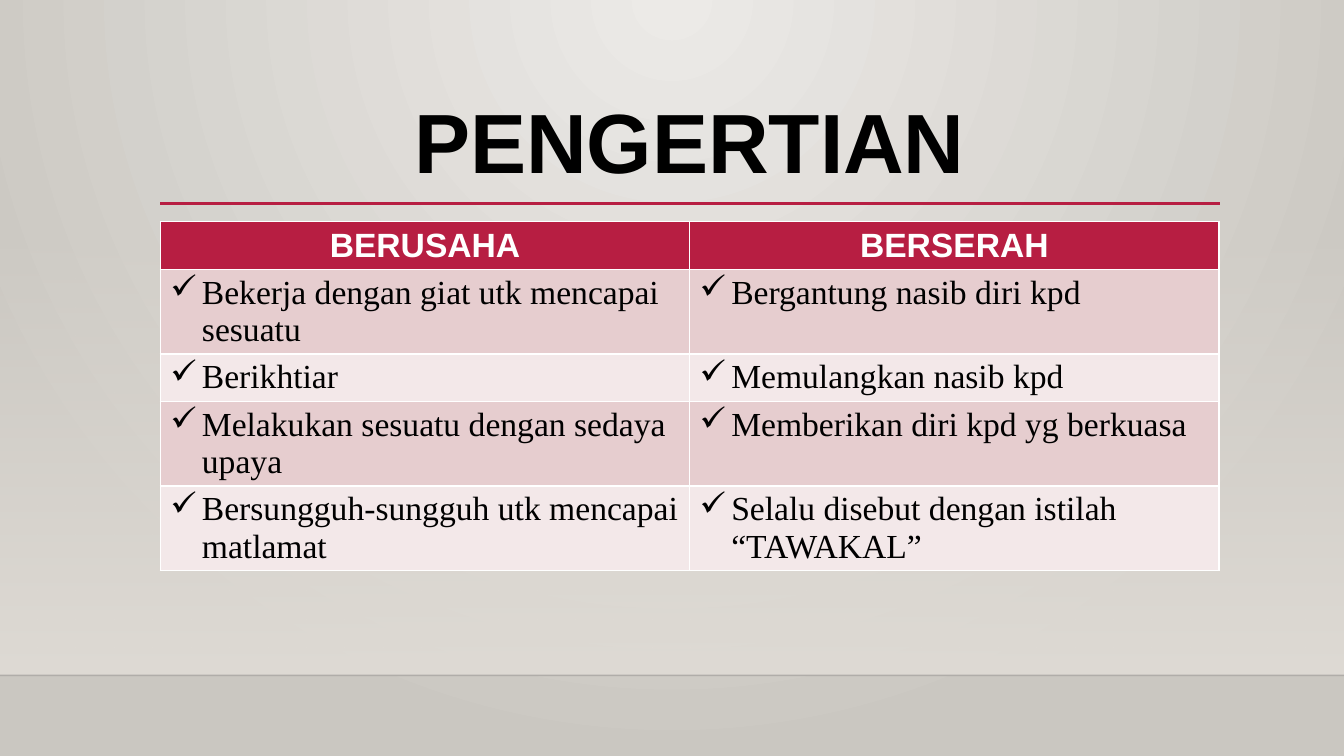
from dataclasses import dataclass

from lxml import etree
from pptx import Presentation
from pptx.dml.color import RGBColor
from pptx.enum.shapes import MSO_CONNECTOR, MSO_SHAPE
from pptx.enum.text import MSO_ANCHOR, MSO_AUTO_SIZE, PP_ALIGN
from pptx.oxml.ns import qn
from pptx.util import Pt

LINE = MSO_CONNECTOR.STRAIGHT
RECT = MSO_SHAPE.RECTANGLE
MIDDLE = MSO_ANCHOR.MIDDLE
CENTER = PP_ALIGN.CENTER
LEFT = PP_ALIGN.LEFT
FIXED = MSO_AUTO_SIZE.NONE

UNIT = 9144  # EMU per px, 100 px to the inch
WIDE, HIGH = 1333, 750


@dataclass(frozen=True)
class Theme:
    light: str = "ECEAE7"
    dark: str = "CAC7C1"
    wall: str = "DFDBD5"
    edge: str = "000001"
    accent: str = "B71E42"
    bands: tuple = ("E6CDCF", "F3E8E9")
    ink: str = "000000"
    white: str = "FFFFFF"
    sans: str = "Arial"
    serif: str = "Times New Roman"
    title: int = 60
    body: int = 24


THEME = Theme()
HEADS = ("BERUSAHA", "BERSERAH")
ROWS = (
    ("Bekerja dengan giat utk mencapai sesuatu", "Bergantung nasib diri kpd"),
    ("Berikhtiar", "Memulangkan nasib kpd"),
    ("Melakukan sesuatu dengan sedaya upaya", "Memberikan diri kpd yg berkuasa"),
    ("Bersungguh-sungguh utk mencapai matlamat",
     "Selalu disebut dengan istilah “TAWAKAL”"),
)
TALL = (47, 84, 47, 84, 84)


def px(*nums):
    return [round(num * UNIT) for num in nums]


def rgb(code):
    return RGBColor.from_string(code)


def add_tag(parent, tag, **attrs):
    return etree.SubElement(parent, qn(tag), attrs)


def set_alpha(node, share):
    add_tag(node.find(".//" + qn("a:srgbClr")), "a:alpha", val=str(share * 1000))


def set_font(para, face, size, color, bold):
    font = para.font
    font.name, font.size, font.bold = face, Pt(size), bold
    font.color.rgb = rgb(color)


def blend(fill, first, last):
    fill.gradient()
    for stop, code in zip(fill.gradient_stops, (first, last)):
        stop.color.rgb = rgb(code)


def add_line(slide, box, color, weight):
    left, top, width = box
    line = slide.shapes.add_connector(LINE, *px(left, top, left + width, top))
    line.line.color.rgb = rgb(color)
    line.line.width = Pt(weight)
    add_tag(line.element.spPr, "a:effectLst")
    return line


def draw_back(slide, box):
    left, top, width, height = box
    # Round glow from the top centre
    blend(slide.background.fill, THEME.light, THEME.dark)
    lin = slide.element.find(".//" + qn("a:lin"))
    glow = lin.getparent()
    glow.remove(lin)
    ring = add_tag(glow, "a:path", path="circle")
    add_tag(ring, "a:fillToRect", l="43000", t="0", r="43000", b="100000")

    # Wall fading in down to the floor edge
    floor = top + 670
    wall = slide.shapes.add_shape(RECT, *px(left, top + 221, width, 449))
    wall.shadow.inherit = False
    wall.line.fill.background()
    blend(wall.fill, THEME.wall, THEME.wall)
    wall.fill.gradient_angle = 270
    set_alpha(wall.element.spPr, 0)
    edge = add_line(slide, (left, floor, width), THEME.edge, 1)
    set_alpha(edge.element.spPr, 20)


def draw_title(slide, box, text):
    left, top, width, height = box
    add_line(slide, (left, top + 114, width + 1), THEME.accent, 2.5)
    title = slide.shapes.title
    title.left, title.top, title.width, title.height = px(*box)
    frame = title.text_frame
    frame.text = text
    frame.auto_size = FIXED
    frame.vertical_anchor = MIDDLE
    para = frame.paragraphs[0]
    para.alignment = CENTER
    para.line_spacing = 0.9
    set_font(para, THEME.sans, THEME.title, THEME.ink, True)


def add_check(para):
    props = para._p.get_or_add_pPr()
    props.set("marL", "285750")
    props.set("indent", "-285750")
    add_tag(props, "a:buChar", char="✓")


def draw_table(slide, box):
    grid = (HEADS,) + ROWS
    table = slide.shapes.add_table(len(grid), len(HEADS), *px(*box)).table
    for col in table.columns:
        col.width = px(box[2] / len(HEADS))[0]
    for num, texts in enumerate(grid):
        table.rows[num].height = px(TALL[num])[0]
        for cell, text in zip(table.rows[num].cells, texts):
            cell.text = text
            cell.fill.solid()
            para = cell.text_frame.paragraphs[0]
            if num == 0:
                cell.fill.fore_color.rgb = rgb(THEME.accent)
                para.alignment = CENTER
                set_font(para, THEME.sans, THEME.body, THEME.white, True)
            else:
                cell.fill.fore_color.rgb = rgb(THEME.bands[(num - 1) % 2])
                para.alignment = LEFT
                add_check(para)
                set_font(para, THEME.serif, THEME.body, THEME.ink, False)


def main():
    deck = Presentation()
    deck.slide_width, deck.slide_height = px(WIDE, HIGH)
    slide = deck.slides.add_slide(deck.slide_layouts[5])
    draw_back(slide, (0, 0, WIDE, HIGH))
    draw_title(slide, (159, 88, 1050, 115), "PENGERTIAN")
    draw_table(slide, (159, 220, 1050, sum(TALL)))
    deck.save("out.pptx")


if __name__ == "__main__":
    main()
